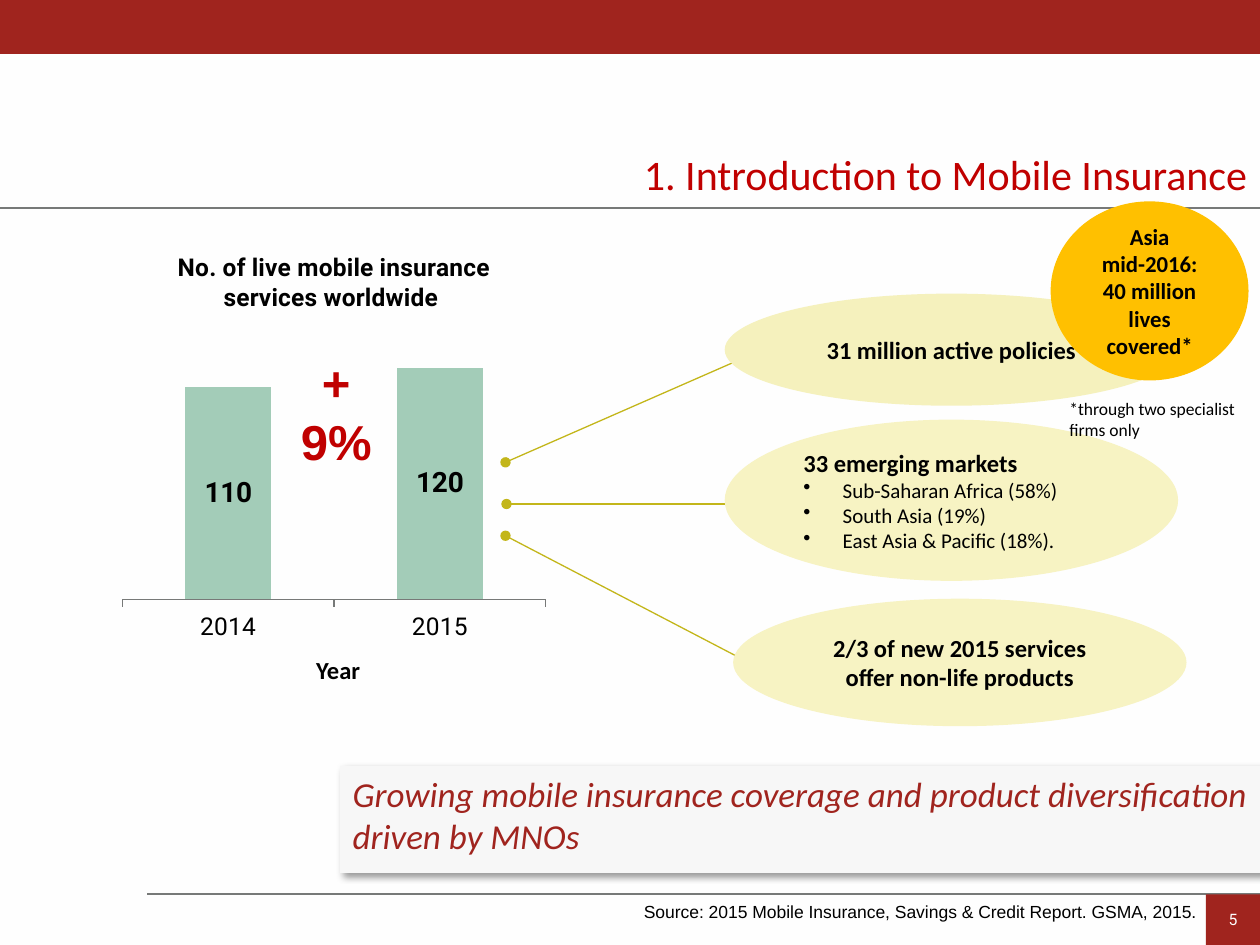
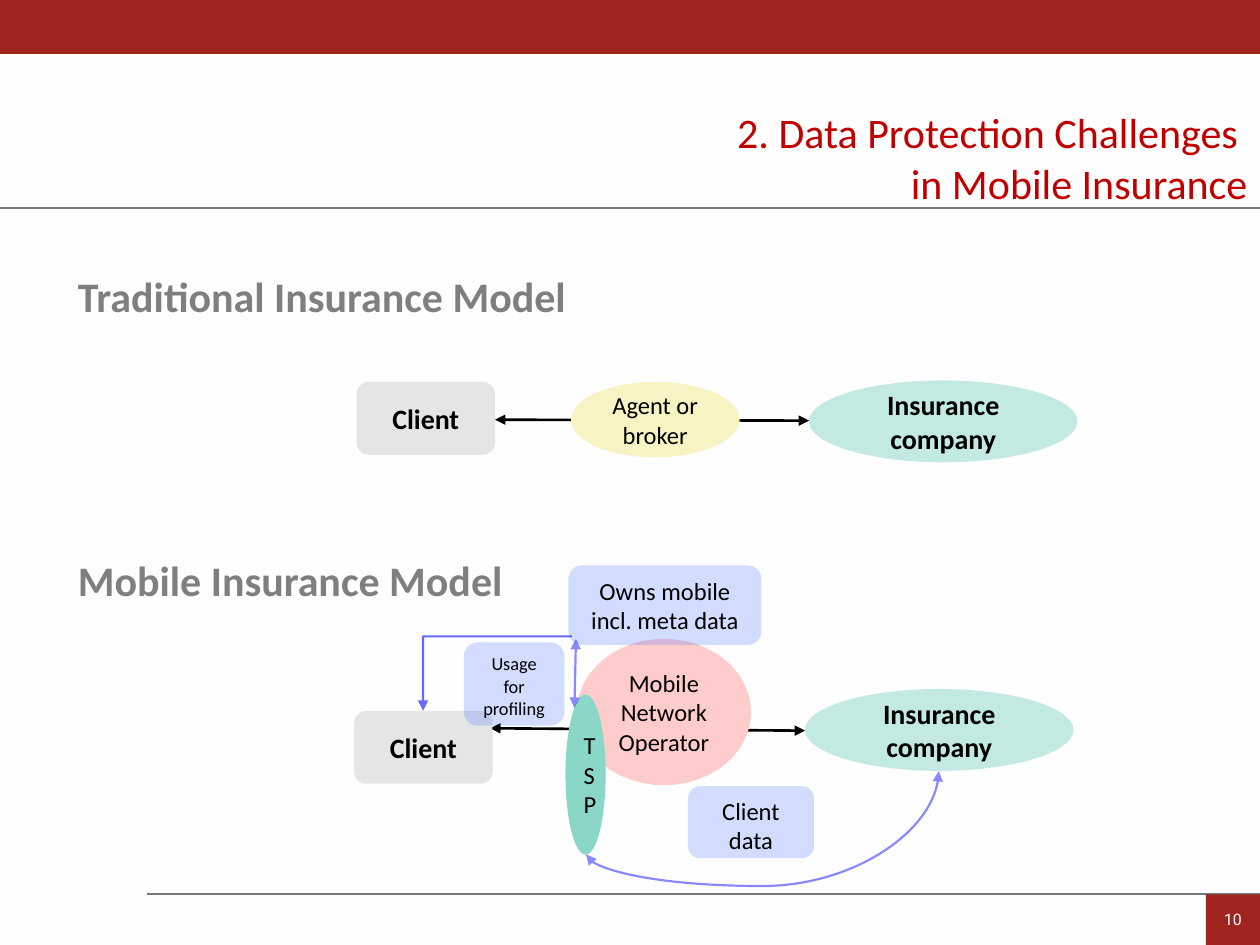
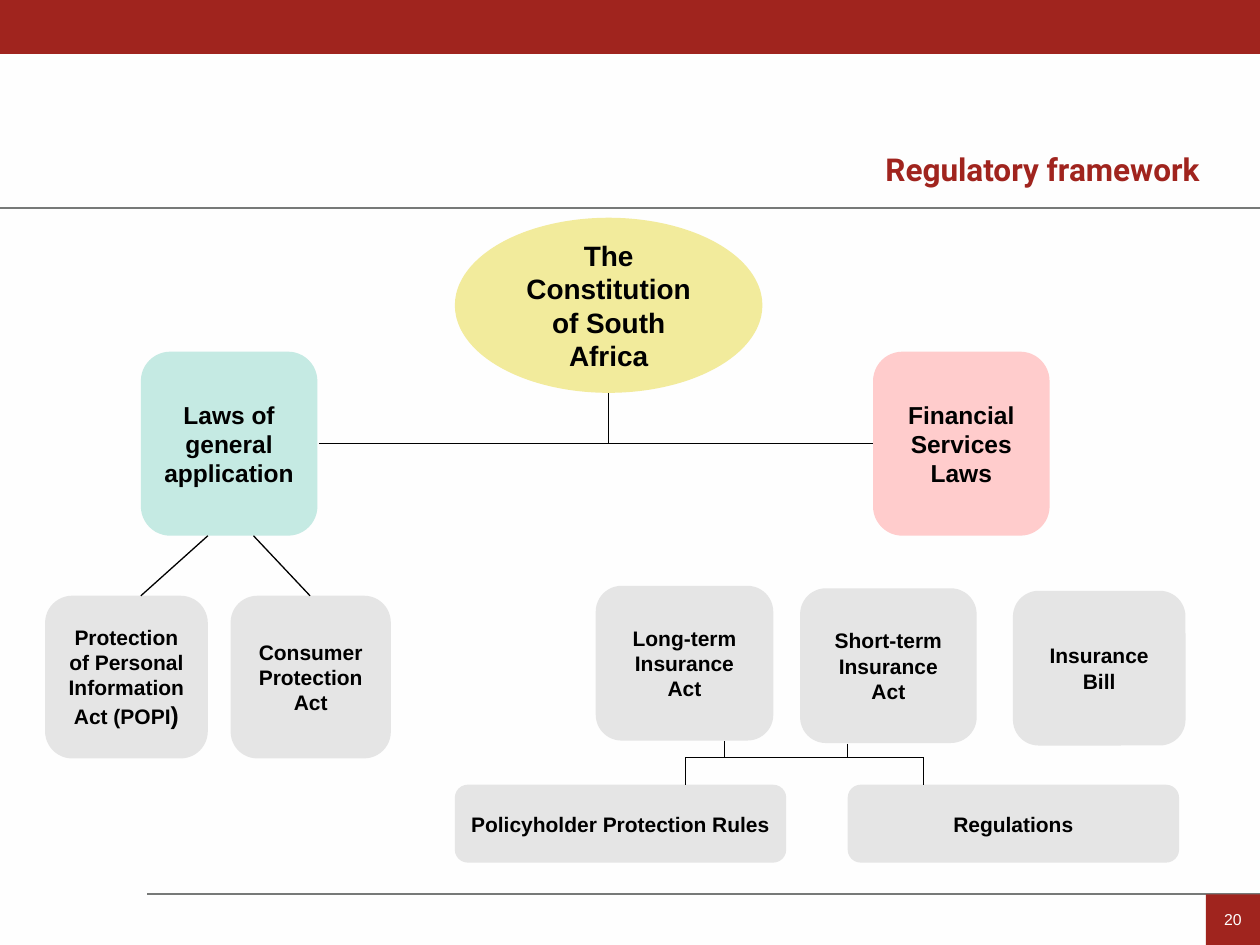
from dataclasses import dataclass

from lxml.etree import SubElement
from pptx import Presentation
from pptx.chart.data import CategoryChartData
from pptx.dml.color import RGBColor
from pptx.enum.chart import XL_CHART_TYPE as ChartType, XL_TICK_MARK as Tick
from pptx.enum.shapes import MSO_CONNECTOR as Link, MSO_SHAPE as Kind
from pptx.enum.text import MSO_ANCHOR as Anchor, PP_ALIGN as Align
from pptx.oxml.ns import qn
from pptx.util import Cm, Pt


@dataclass(frozen=True)
class Theme:
    paper: str = "FEFEFE"
    band: str = "A0241E"
    rule: str = "777978"
    title: str = "C00000"
    ink: str = "000000"
    heading: str = "7F7F7F"
    bar: str = "A3CCB8"
    olive: str = "C3B61A"
    cream: str = "F7F3C3"
    cream_deep: str = "F5F1BD"
    yellow: str = "F2EB9C"
    amber: str = "FFC000"
    banner: str = "F7F7F7"
    gray: str = "E5E5E5"
    mint: str = "C2EAE2"
    mint_pale: str = "C5EAE3"
    teal: str = "8AD6C7"
    pink: str = "FFCCCC"
    data_fill: str = "3366FF"
    data_line: str = "0000FF"
    body: str = "Calibri"
    legal: str = "Arial"
    display: str = "Roboto"
    title_size: float = 24
    banner_size: float = 20
    large: float = 16
    medium: float = 14
    callout: float = 13
    small: float = 12
    tag: float = 10.5
    note: float = 10
    number: float = 9


theme = Theme()


def place(slide, kind, at, text="", size=theme.medium, fill=None, alpha=None, font=theme.body,
          color=theme.ink, bold=False, italic=False, align=Align.CENTER, anchor=Anchor.MIDDLE):
    """Add a filled shape, or a text box when kind is None; at is in centimetres."""
    at = [Cm(length) for length in at]
    if kind is None:
        box = slide.shapes.add_textbox(*at)
    else:
        box = slide.shapes.add_shape(kind, *at)
        box.shadow.inherit = False
        box.line.fill.background()
        box.fill.solid()
        box.fill.fore_color.rgb = RGBColor.from_string(fill)
        if alpha:
            tint = box.element.spPr.find(".//" + qn("a:srgbClr"))
            SubElement(tint, qn("a:alpha"), val=str(alpha * 1000))
    frame = box.text_frame
    frame.word_wrap = True
    frame.vertical_anchor = anchor
    frame.text = text
    for para in frame.paragraphs:
        para.alignment = align
        para.font.name, para.font.size = font, Pt(size)
        para.font.bold, para.font.italic = bold, italic
        para.font.color.rgb = RGBColor.from_string(color)
    return box


def connect(slide, start, end, color=theme.ink, width=0.75, alpha=None,
            head=None, tail=None, kind=Link.STRAIGHT):
    """Add a connector between two points in centimetres."""
    line = slide.shapes.add_connector(kind, *[Cm(length) for length in (*start, *end)])
    line.line.color.rgb = RGBColor.from_string(color)
    line.line.width = Pt(width)
    properties = line.element.spPr
    outline = properties.find(qn("a:ln"))
    if alpha:
        SubElement(outline.find(".//" + qn("a:srgbClr")), qn("a:alpha"), val=str(alpha * 1000))
    for tag, tip in (("a:headEnd", head), ("a:tailEnd", tail)):
        if tip:
            SubElement(outline, qn(tag), type=tip)
    SubElement(properties, qn("a:effectLst"))
    return line


deck = Presentation()
deck.slide_width, deck.slide_height = Cm(25.4), Cm(19.05)
background = deck.slide_master.background.fill
background.solid()
background.fore_color.rgb = RGBColor.from_string(theme.paper)

# Shared frame: rules, top band and page number
slides = []
for number, number_font in (("5", theme.display), ("10", theme.display), ("20", theme.legal)):
    slide = deck.slides.add_slide(deck.slide_layouts[6])
    connect(slide, (2.97, 18.03), (25.4, 18.03), theme.rule, 1.25)
    connect(slide, (0, 4.19), (25.4, 4.19), theme.rule, 1.25)
    place(slide, Kind.RECTANGLE, (0, 0, 25.4, 1.09), fill=theme.band)
    place(slide, Kind.RECTANGLE, (24.31, 18.03, 1.09, 1.02), number, theme.number,
          theme.band, font=number_font, color=theme.paper)
    slides.append(slide)
market, models, laws = slides

# Right-aligned titles
for slide, top, height, title in (
    (market, 2.87, 1.27, "1. Introduction to Mobile Insurance"),
    (models, 2.03, 2.31, "2. Data Protection Challenges \nin Mobile Insurance"),
):
    place(slide, None, (11.28, top, 14.12, height), title, theme.title_size,
          color=theme.title, align=Align.RIGHT, anchor=Anchor.TOP)

# Market: source and chart of services
place(market, None, (2.97, 18.03, 21.39, 0.69),
      "Source: 2015 Mobile Insurance, Savings & Credit Report. GSMA, 2015.",
      theme.note, font=theme.legal, align=Align.RIGHT, anchor=Anchor.TOP)
data = CategoryChartData()
data.categories = ["2014", "2015"]
data.add_series("Series 1", (110, 120))
chart = market.shapes.add_chart(ChartType.COLUMN_STACKED, Cm(2.29), Cm(4.65),
                                Cm(8.89), Cm(8.46), data).chart
chart.font.name, chart.font.size = theme.display, Pt(18)
chart.font.color.rgb = RGBColor.from_string(theme.ink)
chart.has_legend = False
chart.has_title = True
chart.chart_title.include_in_layout = False
chart.chart_title.text_frame.text = "No. of live mobile insurance services worldwide "
title_font = chart.chart_title.text_frame.paragraphs[0].font
title_font.name, title_font.size, title_font.bold = theme.display, Pt(theme.medium), True
title_font.color.rgb = RGBColor.from_string(theme.ink)
chart.value_axis.visible = False
chart.value_axis.has_major_gridlines = False
chart.value_axis.minimum_scale = 0
years = chart.category_axis
years.major_tick_mark = Tick.OUTSIDE
years.tick_labels.font.size = Pt(theme.medium)
years.format.line.color.rgb = RGBColor.from_string(theme.rule)
plot = chart.plots[0]
plot.gap_width, plot.overlap, plot.vary_by_categories = 145, 20, False
bars = plot.series[0]
bars.format.fill.solid()
bars.format.fill.fore_color.rgb = RGBColor.from_string(theme.bar)
labels = bars.data_labels
labels.show_value = True
labels.font.size, labels.font.bold = Pt(theme.large), True
labels.font.color.rgb = RGBColor.from_string(theme.ink)
place(market, None, (3.43, 13.08, 6.78, 0.86), "Year", bold=True, anchor=Anchor.TOP)

# Market: findings linked to the chart
for start, end in (
    ((10.19, 9.32), (15.39, 7.04)),
    ((10.21, 10.16), (15.19, 10.16)),
    ((10.19, 10.8), (15.39, 13.51)),
):
    connect(market, start, end, theme.olive, head="oval", tail="oval")
place(market, Kind.OVAL, (14.61, 5.92, 9.14, 2.26), "31 million active policies",
      fill=theme.cream_deep, bold=True)
regions = place(market, Kind.OVAL, (14.61, 8.46, 9.14, 3.25),
                "33 emerging markets\nSub-Saharan Africa (58%)\nSouth Asia (19%)\n"
                "East Asia & Pacific (18%).",
                fill=theme.cream, bold=True, align=Align.LEFT)
for para in regions.text_frame.paragraphs[1:]:
    settings = para._p.get_or_add_pPr()
    settings.set("marL", str(Cm(0.79)))
    settings.set("indent", str(-Cm(0.79)))
    bullet = SubElement(settings, qn("a:buChar"), char="•")
    settings.insert(0, bullet)
    para.font.size, para.font.bold = Pt(theme.small), False
place(market, Kind.OVAL, (14.78, 12.07, 9.14, 2.57),
      "2/3 of new 2015 services offer non-life products", fill=theme.cream, bold=True)

# Market: takeaway banner with shadow
banner = place(market, Kind.RECTANGLE, (6.86, 15.44, 18.59, 2.16),
               "Growing mobile insurance coverage and product diversification driven by MNOs",
               theme.banner_size, theme.banner, color=theme.band, italic=True,
               align=Align.LEFT, anchor=Anchor.TOP)
shadow = SubElement(banner.element.spPr.find(qn("a:effectLst")), qn("a:outerShdw"),
                    blurRad=str(Pt(4)), dist=str(Pt(3)), dir="2700000", rotWithShape="0")
shade = SubElement(shadow, qn("a:srgbClr"), val=theme.ink)
SubElement(shade, qn("a:alpha"), val="40000")

# Market: growth figure and regional callout
place(market, None, (5.66, 6.99, 2.24, 1.02), "+ 9%", 28, font=theme.legal,
      color=theme.title, bold=True, anchor=Anchor.TOP)
place(market, Kind.OVAL, (21.18, 4.06, 3.99, 3.61), "Asia mid-2016: 40 million lives covered*",
      theme.callout, theme.amber, bold=True)
place(market, None, (21.31, 7.9, 4.09, 1.12), "*through two specialist firms only",
      theme.note, align=Align.LEFT, anchor=Anchor.TOP)

# Models: headings
for top, heading in ((5.33, "Traditional Insurance Model"), (11.05, "Mobile Insurance Model")):
    place(models, None, (1.32, top, 23.62, 1.27), heading, theme.title_size,
          color=theme.heading, bold=True, align=Align.LEFT, anchor=Anchor.TOP)

# Models: client and insurer joined by an arrow, in both models
for insurer, client, start, end in (
    ((16.31, 7.67), (7.19, 7.7), (9.98, 8.46), (16.31, 8.48)),
    ((16.23, 13.89), (7.14, 14.33), (9.88, 14.68), (16.23, 14.73)),
):
    place(models, Kind.OVAL, (*insurer, 5.41, 1.65), "Insurance company", theme.large,
          theme.mint, bold=True)
    connect(models, start, end, width=1.5, head="triangle", tail="triangle")
    place(models, Kind.ROUNDED_RECTANGLE, (*client, 2.79, 1.47), "Client", theme.large,
          theme.gray, bold=True)

# Models: intermediaries
place(models, Kind.OVAL, (11.51, 7.7, 3.4, 1.52), "Agent or broker", fill=theme.cream)
place(models, Kind.OVAL, (11.63, 12.88, 3.51, 2.95), "Mobile Network Operator", fill=theme.pink)
provider = place(models, Kind.OVAL, (11.4, 14, 0.81, 3.23), "TSP", fill=theme.teal)
provider.text_frame._txBody.bodyPr.set("vert", "wordArtVert")

# Models: data held and data flows
for at, text, size in (
    ((11.46, 11.4, 3.89, 1.6), "Owns mobile incl. meta data", theme.medium),
    ((9.35, 12.95, 2.03, 1.68), "Usage for profiling", theme.tag),
    ((13.87, 15.85, 2.54, 1.45), "Client data", theme.medium),
):
    place(models, Kind.ROUNDED_RECTANGLE, at, text, size, theme.data_fill, 22, anchor=Anchor.TOP)
to_client = connect(models, (11.53, 12.83), (8.53, 14.33), theme.data_line, 1.25, 59,
                    tail="triangle", kind=Link.ELBOW)
to_client.element.spPr.find(qn("a:prstGeom")).set("prst", "bentConnector2")
connect(models, (11.61, 12.88), (11.58, 14.27), theme.data_line, 1.25, 45,
        head="triangle", tail="triangle")
to_insurer = connect(models, (16.21, 19.94), (14.53, 12.83), theme.data_line, 1.25, 45,
                     head="triangle", tail="triangle", kind=Link.CURVE)
to_insurer.element.spPr.find(qn("a:xfrm")).set("rot", "5400000")
bends = to_insurer.element.spPr.find(".//" + qn("a:avLst"))
SubElement(bends, qn("a:gd"), name="adj1", fmla="val -38000")

# Laws: title
heading = place(laws, None, (17.6, 2.67, 7.44, 1.4), "Regulatory framework", 18,
                font=theme.display, color=theme.band, bold=True, align=Align.LEFT)
heading.text_frame.paragraphs[0].line_spacing = 1.1

# Laws: constitution and the two branches
place(laws, Kind.OVAL, (9.17, 4.39, 6.2, 3.53), "The Constitution of South Africa",
      theme.large, theme.yellow, font=theme.legal, bold=True)
for left, text, fill in (
    (2.84, "Laws of general application", theme.mint_pale),
    (17.6, "Financial Services Laws", theme.pink),
):
    place(laws, Kind.ROUNDED_RECTANGLE, (left, 7.09, 3.56, 3.71), text, fill=fill,
          font=theme.legal, bold=True)

# Laws: acts and subordinate rules
for at, text in (
    ((4.65, 12.01, 3.23, 3.28), "Consumer Protection Act"),
    ((12.01, 11.81, 3.58, 3.12), "Long-term Insurance Act"),
    ((16.13, 11.86, 3.56, 3.12), "Short-term Insurance Act"),
    ((20.42, 11.91, 3.48, 3.12), "Insurance Bill"),
    ((9.17, 15.82, 6.68, 1.57), "Policyholder Protection Rules"),
    ((17.09, 15.82, 6.68, 1.57), "Regulations"),
    ((0.91, 12.01, 3.28, 3.28), "Protection of Personal Information Act (POPI"),
):
    act = place(laws, Kind.ROUNDED_RECTANGLE, at, text, theme.small, theme.gray,
                font=theme.legal, bold=True)
span = act.text_frame.paragraphs[0].add_run()
span.text = ")"
span.font.size = Pt(theme.medium)

# Laws: tree lines
for start, end in (
    ((12.27, 7.92), (12.27, 8.94)),
    ((6.43, 8.94), (17.6, 8.94)),
    ((4.19, 10.8), (2.84, 12.01)),
    ((5.11, 10.8), (6.25, 12.01)),
    ((13.82, 15.27), (18.62, 15.27)),
    ((13.82, 15.27), (13.82, 15.82)),
    ((18.62, 15.27), (18.62, 15.82)),
    ((14.61, 14.94), (14.61, 15.27)),
    ((17.09, 14.99), (17.09, 15.27)),
):
    connect(laws, start, end)

deck.save("out.pptx")
